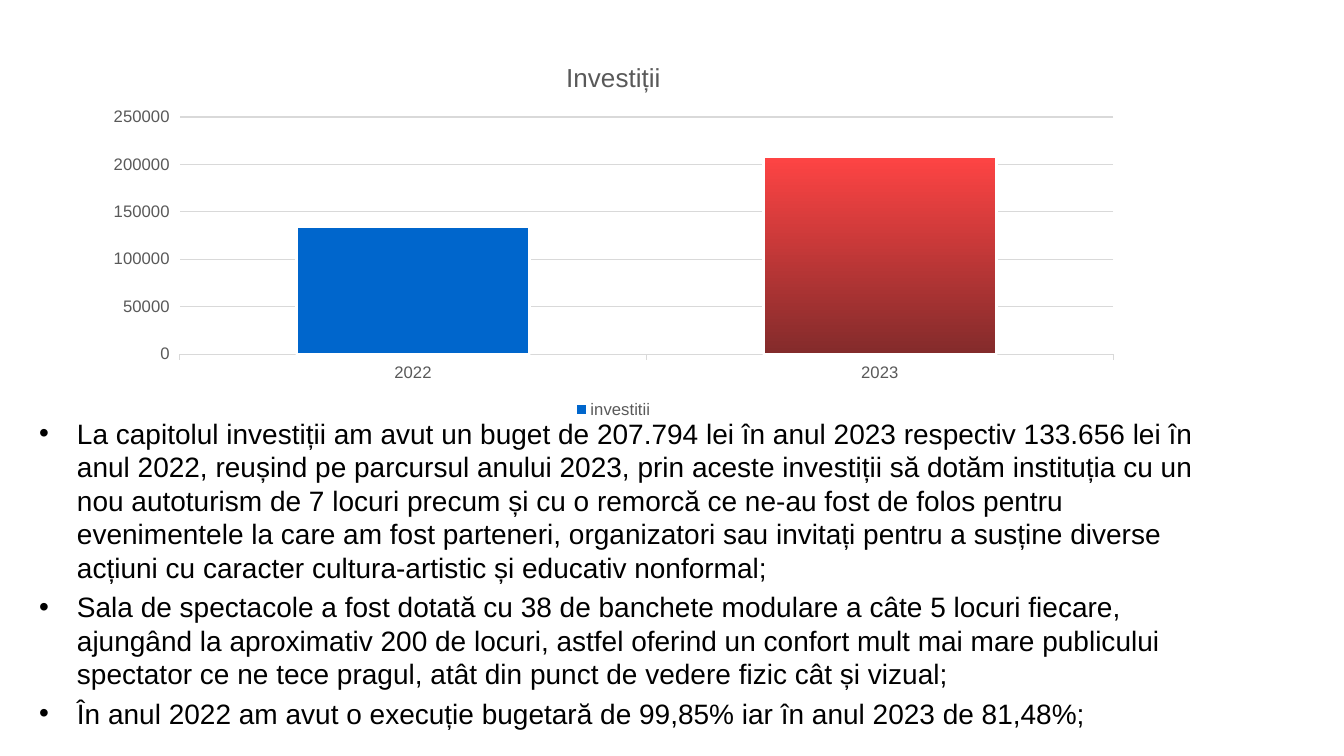
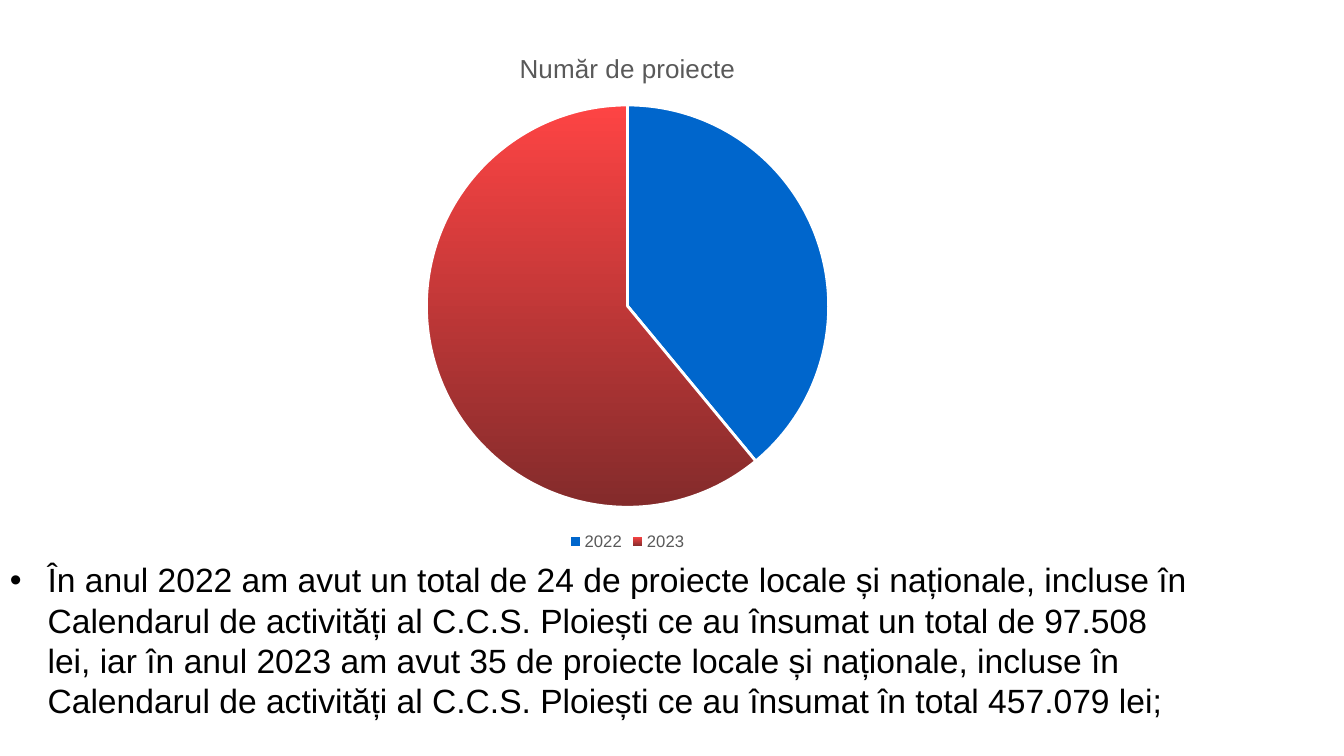
from dataclasses import dataclass

from lxml.etree import SubElement
from pptx import Presentation
from pptx.chart.data import CategoryChartData
from pptx.dml.color import RGBColor
from pptx.enum.chart import XL_CHART_TYPE, XL_LEGEND_POSITION, XL_TICK_MARK
from pptx.oxml.ns import qn
from pptx.util import Cm, Pt


@dataclass(frozen=True)
class Theme:
    font: str = "Arial"
    text: RGBColor = RGBColor(0x00, 0x00, 0x00)
    chart_text: RGBColor = RGBColor(0x59, 0x59, 0x59)
    grid: RGBColor = RGBColor(0xD9, 0xD9, 0xD9)
    blue: RGBColor = RGBColor(0x00, 0x66, 0xCC)
    red_top: RGBColor = RGBColor(0xFE, 0x44, 0x44)
    red_bottom: RGBColor = RGBColor(0x83, 0x2B, 0x2B)
    outline: RGBColor = RGBColor(0xFF, 0xFF, 0xFF)
    chart_title_size: float = 18.6
    label_size: float = 11.9


THEME = Theme()
SLIDE_WIDTH, SLIDE_HEIGHT = Cm(33.87), Cm(19.05)
TEXT_WIDTH = Cm(30.48)
BULLET_INDENT = Cm(0.95)
YEARS = ("2022", "2023")

SLIDES = [
    {
        "chart": {
            "type": XL_CHART_TYPE.COLUMN_CLUSTERED,
            "title": "Investiții",
            "series": "investitii",
            "values": (134000, 208000),
            "box": (Cm(2.34), Cm(1.07), Cm(26.24), Cm(9.58)),
        },
        "text_at": (Cm(0.74), Cm(10.36)),
        "text_size": 20,
        "bullets": [
            "La capitolul investiții am avut un buget de 207.794 lei în anul 2023 "
            "respectiv 133.656 lei în anul 2022, reușind pe parcursul anului 2023, "
            "prin aceste investiții să dotăm instituția cu un nou autoturism de 7 locuri "
            "precum și cu o remorcă ce ne-au fost de folos pentru evenimentele la care "
            "am fost parteneri, organizatori sau invitați pentru a susține diverse "
            "acțiuni cu caracter cultura-artistic și educativ nonformal;",
            "Sala de spectacole a fost dotată cu 38 de banchete modulare a câte 5 locuri "
            "fiecare, ajungând la aproximativ 200 de locuri, astfel oferind un confort "
            "mult mai mare publicului spectator ce ne tece pragul, atât din punct de "
            "vedere fizic cât și vizual;",
            "În anul 2022 am avut o execuție bugetară de 99,85% iar în anul 2023 de 81,48%;",
        ],
    },
    {
        "chart": {
            "type": XL_CHART_TYPE.PIE,
            "title": "Număr de proiecte",
            "series": "Număr de proiecte",
            "values": (39, 61),
            "box": (Cm(2.67), Cm(0.76), Cm(26.29), Cm(13.21)),
        },
        "text_at": (Cm(0), Cm(13.97)),
        "text_size": 24,
        "bullets": [
            "În anul 2022 am avut un total de 24 de proiecte locale și naționale, incluse "
            "în Calendarul de activități al C.C.S. Ploiești ce au însumat un total de "
            "97.508 lei, iar în anul 2023 am avut 35 de proiecte locale și naționale, "
            "incluse în Calendarul de activități al C.C.S. Ploiești ce au însumat în "
            "total 457.079 lei;",
        ],
    },
]


def style_font(font, size, color):
    font.name = THEME.font
    font.size = Pt(size)
    font.bold = False
    font.color.rgb = color


def fill_blue(fill):
    fill.solid()
    fill.fore_color.rgb = THEME.blue


def fill_red_gradient(fill):
    fill.gradient()
    fill.gradient_angle = 270
    for stop, color in zip(fill.gradient_stops, (THEME.red_top, THEME.red_bottom)):
        stop.color.rgb = color


def outline_white(line):
    line.color.rgb = THEME.outline
    line.width = Pt(2)


def style_axes(chart):
    category_axis, value_axis = chart.category_axis, chart.value_axis
    for axis in (category_axis, value_axis):
        axis.major_tick_mark = XL_TICK_MARK.OUTSIDE
        style_font(axis.tick_labels.font, THEME.label_size, THEME.chart_text)
    for line in (category_axis.format.line, value_axis.major_gridlines.format.line):
        line.color.rgb = THEME.grid
        line.width = Pt(0.75)
    value_axis.format.line.fill.background()


def add_year_chart(slide, content):
    data = CategoryChartData()
    data.categories = YEARS
    data.add_series(content["series"], content["values"])
    chart = slide.shapes.add_chart(content["type"], *content["box"], data).chart
    style_font(chart.font, THEME.label_size, THEME.chart_text)

    chart.has_title = True
    title = chart.chart_title.text_frame
    title.text = content["title"]
    style_font(title.paragraphs[0].font, THEME.chart_title_size, THEME.chart_text)

    chart.has_legend = True
    chart.legend.position = XL_LEGEND_POSITION.BOTTOM
    chart.legend.include_in_layout = False
    style_font(chart.legend.font, THEME.label_size, THEME.chart_text)

    plot = chart.plots[0]
    is_column = content["type"] == XL_CHART_TYPE.COLUMN_CLUSTERED
    plot.vary_by_categories = not is_column
    series = plot.series[0]
    fill_blue(series.format.fill)
    outline_white(series.format.line)
    for index, paint in enumerate((fill_blue, fill_red_gradient)):
        point_format = series.points[index].format
        paint(point_format.fill)
        outline_white(point_format.line)
    if is_column:
        plot.gap_width = 100
        style_axes(chart)


def add_bullet(paragraph):
    properties = paragraph._p.get_or_add_pPr()
    properties.set("marL", str(BULLET_INDENT))
    properties.set("indent", str(-BULLET_INDENT))
    SubElement(properties, qn("a:buFont"), typeface=THEME.font)
    SubElement(properties, qn("a:buChar"), char="•")


def add_bullet_text(slide, left, top, size, bullets):
    """Add a bulleted box that reaches down to the bottom of the slide."""
    box = slide.shapes.add_textbox(left, top, TEXT_WIDTH, SLIDE_HEIGHT - top)
    frame = box.text_frame
    frame.word_wrap = True
    for index, text in enumerate(bullets):
        paragraph = frame.add_paragraph() if index else frame.paragraphs[0]
        paragraph.text = text
        add_bullet(paragraph)
        style_font(paragraph.font, size, THEME.text)
        if index:
            paragraph.space_before = Pt(size * 0.2)


def main():
    presentation = Presentation()
    presentation.slide_width, presentation.slide_height = SLIDE_WIDTH, SLIDE_HEIGHT
    blank_layout = presentation.slide_layouts[6]
    for content in SLIDES:
        slide = presentation.slides.add_slide(blank_layout)
        add_bullet_text(slide, *content["text_at"], content["text_size"], content["bullets"])
        add_year_chart(slide, content["chart"])
    presentation.save("out.pptx")


if __name__ == "__main__":
    main()
